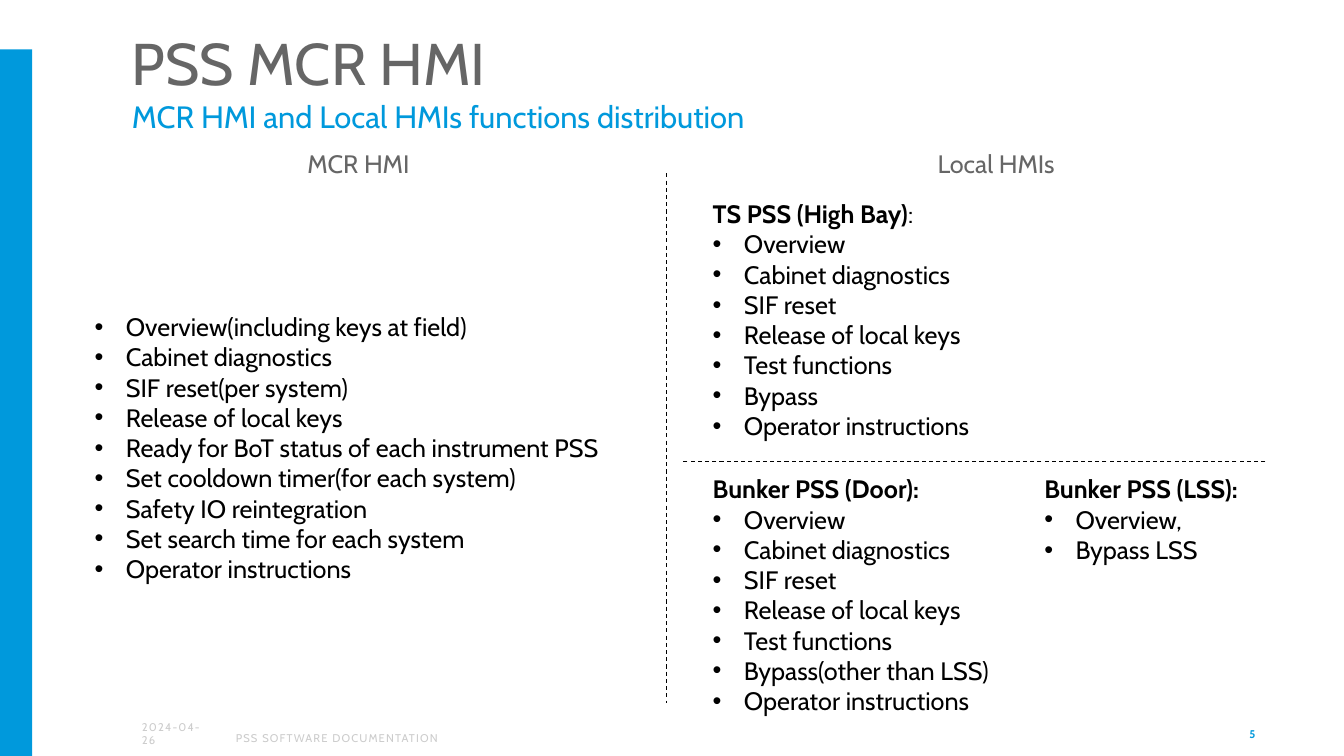
from dataclasses import dataclass

from lxml import etree
from pptx import Presentation
from pptx.dml.color import RGBColor
from pptx.enum.dml import MSO_LINE
from pptx.enum.shapes import MSO_CONNECTOR, MSO_SHAPE
from pptx.enum.text import MSO_ANCHOR, MSO_AUTO_SIZE, PP_ALIGN
from pptx.oxml.ns import qn
from pptx.util import Inches, Pt

RECTANGLE = MSO_SHAPE.RECTANGLE
STRAIGHT = MSO_CONNECTOR.STRAIGHT
DASH = MSO_LINE.DASH
TOP, MIDDLE = MSO_ANCHOR.TOP, MSO_ANCHOR.MIDDLE
LEFT, RIGHT = PP_ALIGN.LEFT, PP_ALIGN.RIGHT
GROW, FIXED = MSO_AUTO_SIZE.SHAPE_TO_FIT_TEXT, MSO_AUTO_SIZE.NONE
BLANK_LAYOUT = 6
BULLET_INDENT = Inches(0.31)


@dataclass(frozen=True)
class Theme:
    font: str = "Cabin"
    blue: str = "0099DC"
    grey: str = "666666"
    pale: str = "CCCCCC"
    black: str = "000000"
    title: int = 42
    subtitle: int = 22
    text: int = 18
    footer: int = 8
    rule: float = 0.75


THEME = Theme()


@dataclass(frozen=True)
class Place:
    left: float
    top: float
    width: float
    height: float

    def lengths(self) -> list:
        return [Inches(v) for v in (self.left, self.top, self.width, self.height)]


@dataclass(frozen=True)
class Label:
    place: Place
    text: str
    size: int
    color: str
    bold: bool = False
    spacing: int = 0
    align: PP_ALIGN = LEFT
    anchor: MSO_ANCHOR = TOP
    wrap: bool = True
    margin_top: float = 0.05
    margin_bottom: float = 0.05
    line_spacing: float = 1.0


@dataclass(frozen=True)
class FunctionList:
    place: Place
    items: tuple
    heading: str = ""
    heading_end: str = ""


@dataclass(frozen=True)
class Divider:
    start: tuple
    end: tuple


LABELS = (
    Label(Place(1.21, 0.29, 10.24, 0.72), "PSS MCR HMI", THEME.title, THEME.grey,
          margin_bottom=0.02, line_spacing=0.9),
    Label(Place(1.21, 0.95, 10.24, 0.55), "MCR HMI and Local HMIs functions distribution",
          THEME.subtitle, THEME.blue, margin_top=0.02),
    Label(Place(2.95, 1.42, 1.27, 0.4), "MCR HMI", THEME.text, THEME.grey, wrap=False),
    Label(Place(9.2, 1.42, 1.42, 0.4), "Local HMIs", THEME.text, THEME.grey, wrap=False),
    Label(Place(1.31, 7.08, 0.91, 0.4), "2024-04-26", THEME.footer, THEME.pale,
          spacing=80, anchor=MIDDLE),
    Label(Place(2.24, 7.12, 4.72, 0.4), "PSS SOFTWARE DOCUMENTATION", THEME.footer, THEME.pale,
          spacing=80, anchor=MIDDLE),
    Label(Place(9.55, 7.08, 3, 0.4), "5", THEME.footer, THEME.blue,
          bold=True, align=RIGHT, anchor=MIDDLE),
)

COMMON = ("Overview", "Cabinet diagnostics", "SIF reset", "Release of local keys", "Test functions")

FUNCTION_LISTS = (
    FunctionList(Place(0.84, 3.04, 5.48, 2.83), (
        "Overview(including keys at field)",
        "Cabinet diagnostics",
        "SIF reset(per system)",
        "Release of local keys",
        "Ready for BoT status of each instrument PSS",
        "Set cooldown timer(for each system)",
        "Safety IO reintegration",
        "Set search time for each system",
        "Operator instructions",
    )),
    FunctionList(Place(6.97, 1.92, 2.95, 2.52), COMMON + ("Bypass", "Operator instructions"),
                 "TS PSS (High Bay)", ":"),
    FunctionList(Place(6.97, 4.65, 3.11, 2.83),
                 COMMON + ("Bypass(other than LSS)", "Operator instructions"),
                 "Bunker PSS (Door):"),
    FunctionList(Place(10.26, 4.65, 2.36, 1.31), ("Overview,", "Bypass LSS"), "Bunker PSS (LSS):"),
)

DIVIDERS = (Divider((6.61, 1.72), (6.61, 6.97)), Divider((12.55, 4.58), (6.76, 4.58)))


def apply(target, values: dict) -> None:
    for name, value in values.items():
        setattr(target, name, value)


def add_span(para, text: str, size: int, color: str, bold: bool = False):
    span = para.add_run()
    span.text = text
    apply(span.font, {"name": THEME.font, "size": Pt(size), "bold": bold})
    span.font.color.rgb = RGBColor.from_string(color)
    return span


def add_frame(page, place: Place, values: dict):
    frame = page.shapes.add_textbox(*place.lengths()).text_frame
    apply(frame, values)
    return frame


def draw_label(page, label: Label) -> None:
    frame = add_frame(page, label.place, {
        "word_wrap": label.wrap,
        "auto_size": FIXED if label.wrap else GROW,
        "vertical_anchor": label.anchor,
        "margin_top": Inches(label.margin_top),
        "margin_bottom": Inches(label.margin_bottom),
    })
    para = frame.paragraphs[0]
    apply(para, {"alignment": label.align, "line_spacing": label.line_spacing})
    span = add_span(para, label.text, label.size, label.color, label.bold)
    if label.spacing:
        span.font._element.set("spc", str(label.spacing))


def add_bullet(para) -> None:
    properties = para._p.get_or_add_pPr()
    properties.set("marL", str(BULLET_INDENT))
    properties.set("indent", str(-BULLET_INDENT))
    etree.SubElement(properties, qn("a:buFont")).set("typeface", "Arial")
    etree.SubElement(properties, qn("a:buChar")).set("char", "•")


def draw_function_list(page, group: FunctionList) -> None:
    frame = add_frame(page, group.place, {"word_wrap": False, "auto_size": GROW})
    para = frame.paragraphs[0]
    if group.heading:
        add_span(para, group.heading, THEME.text, THEME.black, bold=True)
    if group.heading_end:
        add_span(para, group.heading_end, THEME.text, THEME.black)
    for index, item in enumerate(group.items):
        if index or group.heading:
            para = frame.add_paragraph()
        add_bullet(para)
        add_span(para, item, THEME.text, THEME.black)


def draw_divider(page, divider: Divider) -> None:
    ends = [Inches(v) for v in divider.start + divider.end]
    connector = page.shapes.add_connector(STRAIGHT, *ends)
    apply(connector.line, {"width": Pt(THEME.rule), "dash_style": DASH})
    connector.line.color.rgb = RGBColor.from_string(THEME.black)
    etree.SubElement(connector._element.spPr, qn("a:effectLst"))


def draw_side_bar(page, place: Place) -> None:
    bar = page.shapes.add_shape(RECTANGLE, *place.lengths())
    bar.shadow.inherit = False
    bar.fill.solid()
    bar.fill.fore_color.rgb = RGBColor.from_string(THEME.blue)
    bar.line.fill.background()


def main() -> None:
    deck = Presentation()
    apply(deck, {"slide_width": Inches(13.33), "slide_height": Inches(7.5)})
    page = deck.slides.add_slide(deck.slide_layouts[BLANK_LAYOUT])
    draw_side_bar(page, Place(0, 0.49, 0.32, 7.01))
    for label in LABELS:
        draw_label(page, label)
    for group in FUNCTION_LISTS:
        draw_function_list(page, group)
    for divider in DIVIDERS:
        draw_divider(page, divider)
    deck.save("out.pptx")


if __name__ == "__main__":
    main()
